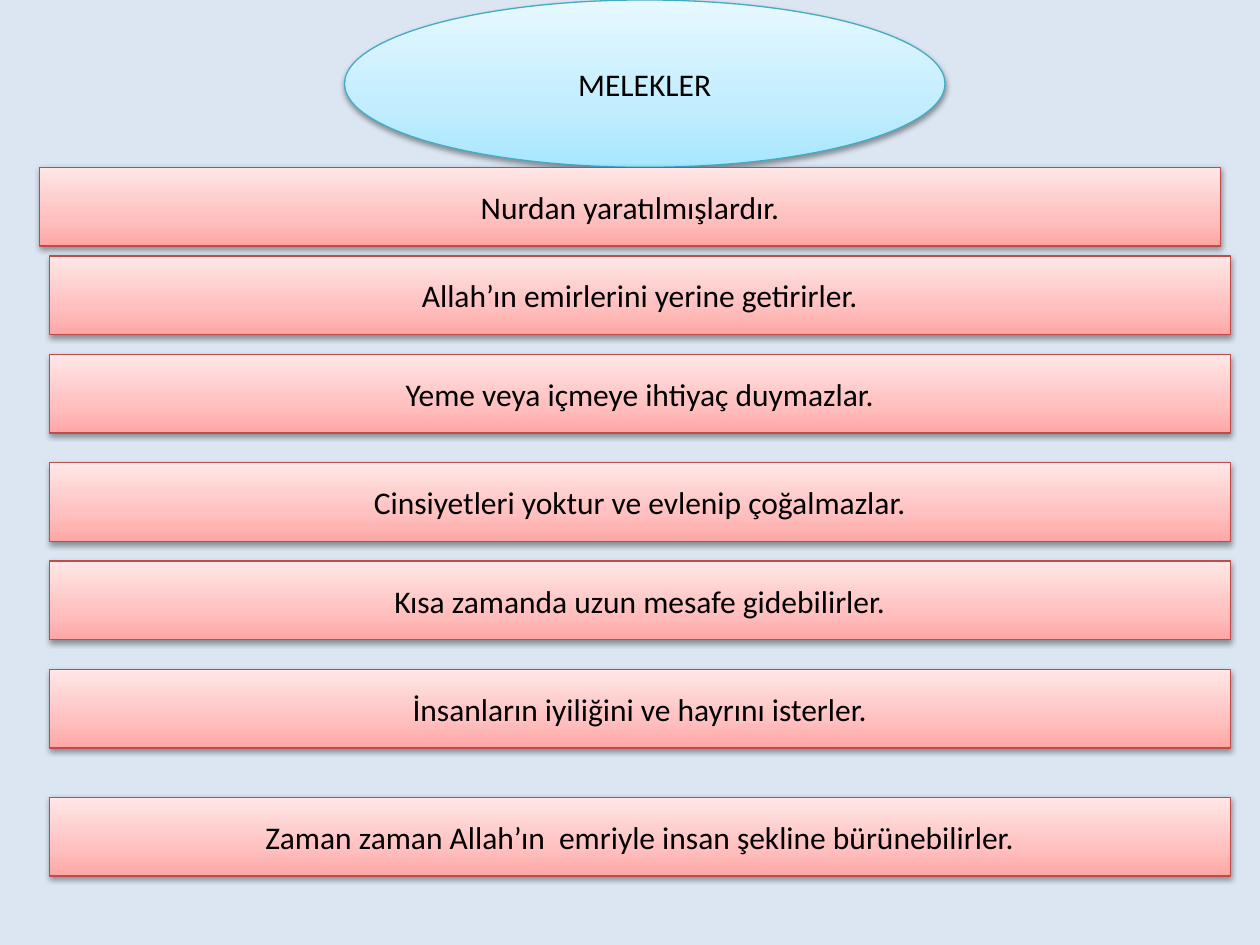
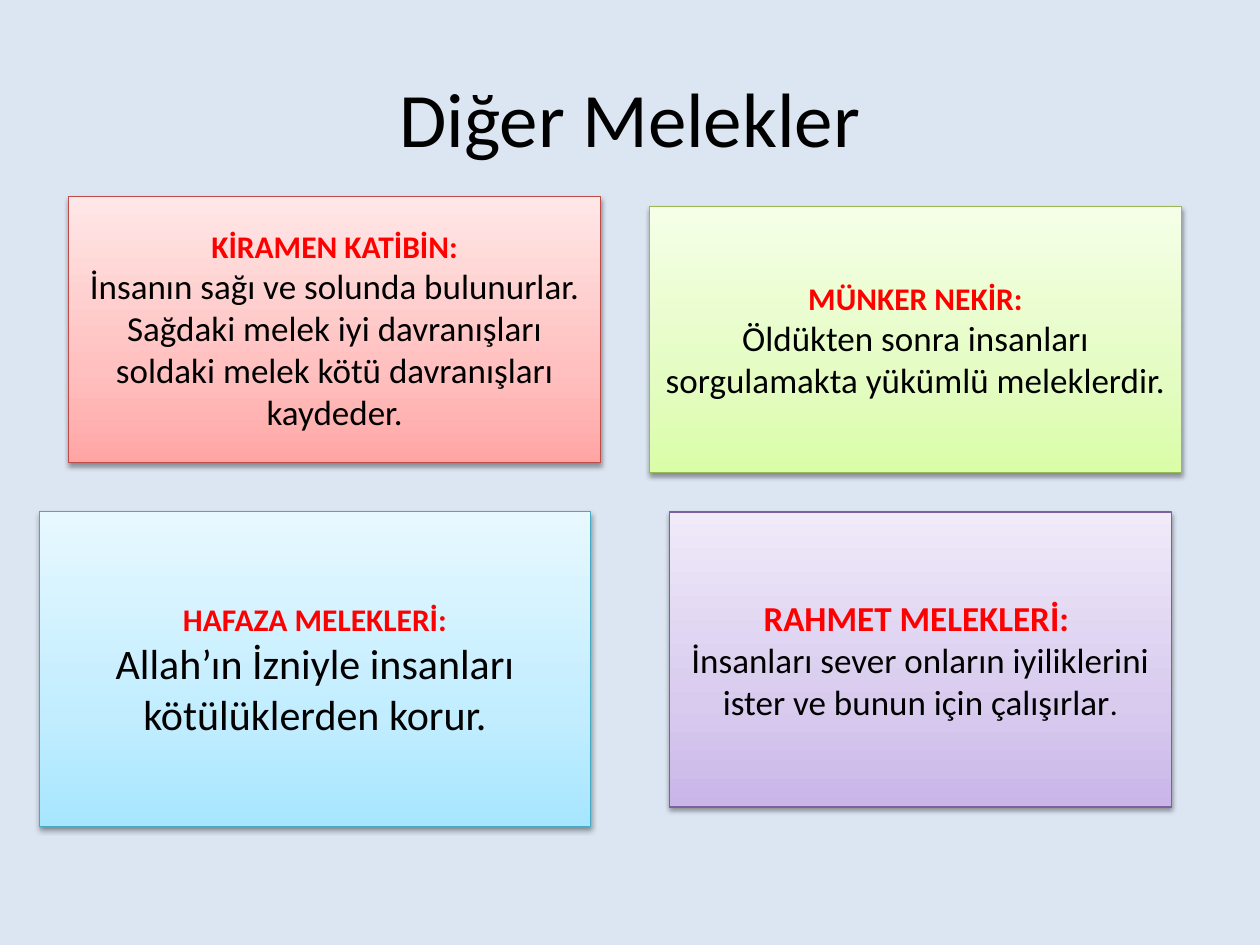
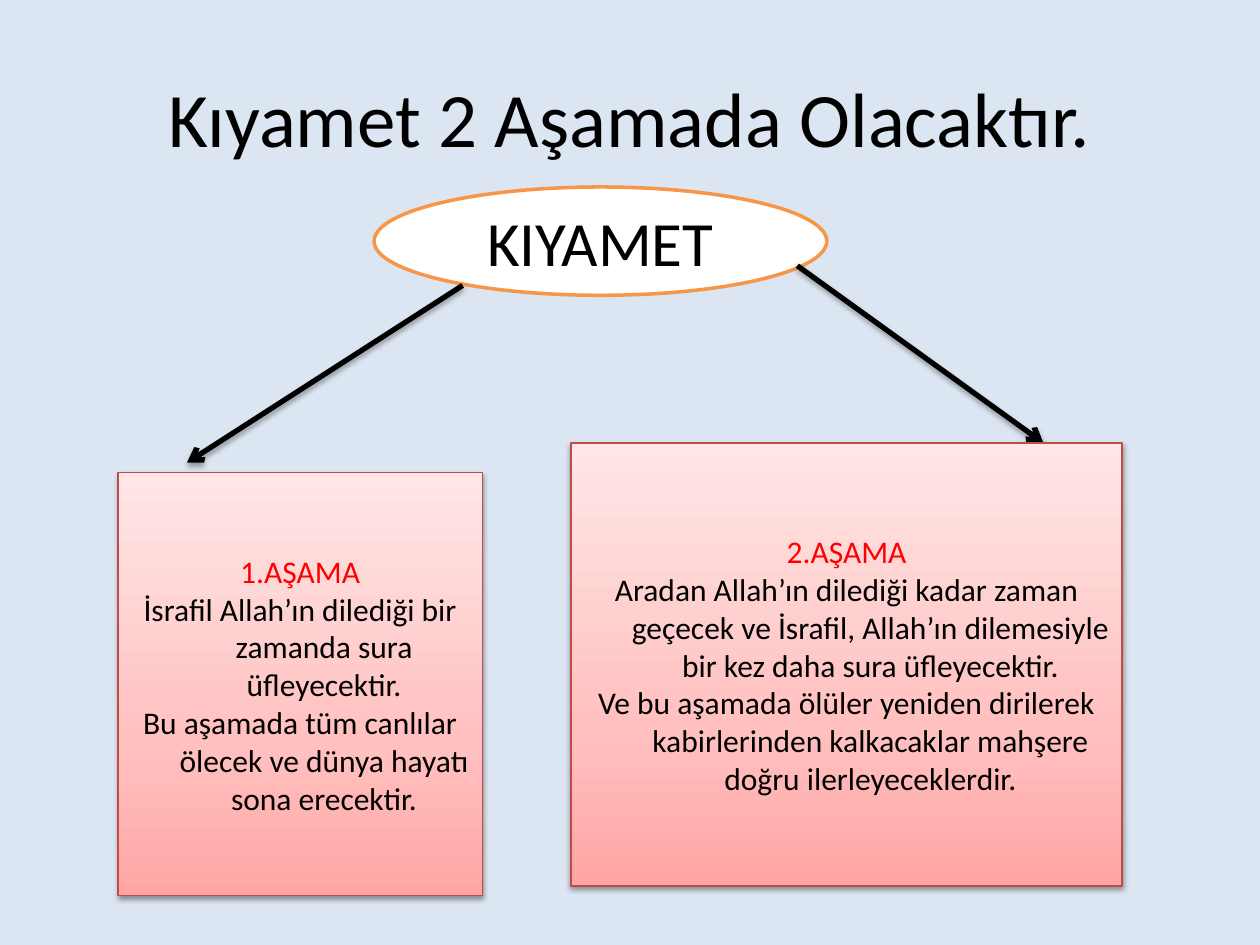
from copy import deepcopy

from lxml.etree import SubElement
from pptx import Presentation
from pptx.dml.color import RGBColor
from pptx.enum.shapes import MSO_CONNECTOR as Connector, MSO_SHAPE as Shape
from pptx.enum.text import MSO_ANCHOR as Anchor, PP_ALIGN as Align
from pptx.oxml.ns import qn
from pptx.util import Inches, Pt

BACKGROUND = RGBColor(0xDC, 0xE6, 0xF2)
BLACK = RGBColor(0, 0, 0)
WHITE = RGBColor(0xFF, 0xFF, 0xFF)
HEADING = RGBColor(0xFF, 0, 0)
ORANGE = RGBColor(0xF7, 0x96, 0x46)
PINK = [RGBColor(0xFF, 0xA6, 0xA5), RGBColor(0xFF, 0xC0, 0xBF),
        RGBColor(0xFF, 0xE7, 0xE7), RGBColor(0xBF, 0x4C, 0x48)]
SKY = [RGBColor(0xA7, 0xE6, 0xFF), RGBColor(0xC1, 0xED, 0xFF),
       RGBColor(0xE7, 0xF8, 0xFF), RGBColor(0x46, 0xAA, 0xC5)]
LIME = [RGBColor(0xDA, 0xFD, 0xA7), RGBColor(0xE4, 0xFC, 0xC2),
        RGBColor(0xF5, 0xFF, 0xE7), RGBColor(0x98, 0xB9, 0x55)]
LILAC = [RGBColor(0xC9, 0xB5, 0xE8), RGBColor(0xD8, 0xCB, 0xEE),
         RGBColor(0xF0, 0xEA, 0xF9), RGBColor(0x7D, 0x60, 0xA0)]
FONT = "Calibri"
GRADIENT_POSITIONS = (0, 0.35, 1)

deck = Presentation()
deck.slide_width, deck.slide_height = Inches(10), Inches(7.5)
CELL = deck.slide_width / 128
shadowed = []


def write_text(box, paragraphs, hanging=0):
    frame = box.text_frame
    frame.word_wrap = True
    frame.vertical_anchor = Anchor.MIDDLE
    for index, spans in enumerate(paragraphs):
        para = frame.add_paragraph() if index else frame.paragraphs[0]
        para.alignment = Align.CENTER
        if hanging:
            properties = para._p.get_or_add_pPr()
            properties.set("marL", str(hanging))
            properties.set("indent", str(-hanging))
        for text, size, color, bold in spans:
            span = para.add_run()
            span.text = text
            span.font.name = FONT
            span.font.size = Pt(size)
            span.font.color.rgb = color
            span.font.bold = bold


def add_card(page, kind, cells, palette, paragraphs, hanging=0):
    card = page.shapes.add_shape(kind, *(int(cell * CELL) for cell in cells))
    card.fill.gradient()
    card.fill.gradient_angle = 90
    stop_list = card._element.spPr.find(".//" + qn("a:gsLst"))
    stop_list.append(deepcopy(stop_list[-1]))
    for stop, position, color in zip(card.fill.gradient_stops, GRADIENT_POSITIONS, palette):
        stop.position = position
        stop.color.rgb = color
    card.line.color.rgb = palette[-1]
    card.line.width = Pt(0.75)
    write_text(card, paragraphs, hanging)
    shadowed.append((card, 38, 1.6))


pages = []
for title in (None, "Diğer Melekler", "Kıyamet 2 Aşamada Olacaktır."):
    page = deck.slides.add_slide(deck.slide_layouts[6])
    page.background.fill.solid()
    page.background.fill.fore_color.rgb = BACKGROUND
    if title:
        title_box = page.shapes.add_textbox(
            int(deck.slide_width * 0.05), int(deck.slide_height * 0.04),
            int(deck.slide_width * 0.9), int(deck.slide_height / 6))
        write_text(title_box, [[(title, 44, BLACK, False)]])
    pages.append(page)
angels_page, other_angels_page, doomsday_page = pages

add_card(angels_page, Shape.OVAL, (35, 0, 61, 17), SKY, [[("MELEKLER", 18, BLACK, False)]])
traits = [
    (4, 17, "Nurdan yaratılmışlardır."),
    (5, 26, "Allah’ın emirlerini yerine getirirler."),
    (5, 36, "Yeme veya içmeye ihtiyaç duymazlar."),
    (5, 47, "Cinsiyetleri yoktur ve evlenip çoğalmazlar."),
    (5, 57, "Kısa zamanda uzun mesafe gidebilirler."),
    (5, 68, "İnsanların iyiliğini ve hayrını isterler."),
    (5, 81, "Zaman zaman Allah’ın  emriyle insan şekline bürünebilirler."),
]
for column, row, trait in traits:
    add_card(angels_page, Shape.RECTANGLE, (column, row, 120, 8), PINK,
             [[(trait, 18, BLACK, False)]])

angels = [
    ((7, 20, 54, 27), PINK, ("KİRAMEN KATİBİN:", 18),
     [("İnsanın sağı ve solunda bulunurlar. Sağdaki melek iyi davranışları "
       "soldaki melek kötü davranışları kaydeder.", 20)]),
    ((66, 21, 54, 27), LIME, ("MÜNKER NEKİR:", 18),
     [("Öldükten sonra insanları sorgulamakta yükümlü meleklerdir.", 20)]),
    ((4, 52, 56, 32), SKY, ("HAFAZA MELEKLERİ:", 18),
     [("Allah’ın İzniyle insanları kötülüklerden korur.", 24)]),
    ((68, 52, 51, 30), LILAC, ("RAHMET MELEKLERİ: ", 20),
     [("İnsanları sever onların iyiliklerini ister ve bunun için çalışırlar", 20), (".", 18)]),
]
for cells, palette, name, duties in angels:
    add_card(other_angels_page, Shape.RECTANGLE, cells, palette,
             [[(*name, HEADING, True)], [(*duty, BLACK, False) for duty in duties]])

doomsday = doomsday_page.shapes.add_shape(
    Shape.OVAL, *(int(cell * CELL) for cell in (38, 19, 46, 11)))
doomsday.shadow.inherit = False
doomsday.fill.solid()
doomsday.fill.fore_color.rgb = WHITE
doomsday.line.color.rgb = ORANGE
doomsday.line.width = Pt(2)
write_text(doomsday, [[("KIYAMET", 36, BLACK, False)]])

for ends in ((47, 29, 19, 47), (81, 27, 106, 45)):
    arrow = doomsday_page.shapes.add_connector(
        Connector.STRAIGHT, *(int(cell * CELL) for cell in ends))
    arrow.line.color.rgb = BLACK
    arrow.line.width = Pt(3)
    SubElement(arrow._element.spPr.find(qn("a:ln")), qn("a:tailEnd"), type="arrow")
    shadowed.append((arrow, 35, 1.8))

stages = [
    ((12, 48, 37, 43), "1.AŞAMA",
     ["İsrafil Allah’ın dilediği bir zamanda sura üfleyecektir.",
      "Bu aşamada tüm canlılar ölecek ve dünya hayatı sona erecektir."]),
    ((58, 45, 56, 45), "2.AŞAMA",
     ["Aradan Allah’ın dilediği kadar zaman geçecek ve İsrafil, Allah’ın dilemesiyle "
      "bir kez daha sura üfleyecektir.",
      "Ve bu aşamada ölüler yeniden dirilerek kabirlerinden kalkacaklar mahşere "
      "doğru ilerleyeceklerdir."]),
]
for cells, stage, events in stages:
    add_card(doomsday_page, Shape.RECTANGLE, cells, PINK,
             [[(stage, 18, HEADING, False)]] + [[(event, 18, BLACK, False)] for event in events],
             Inches(0.38))

for caster, opacity, distance in shadowed:
    effects = SubElement(caster._element.spPr, qn("a:effectLst"))
    shadow = SubElement(effects, qn("a:outerShdw"), blurRad=str(Pt(3.1)),
                        dist=str(Pt(distance)), dir="5400000", rotWithShape="0")
    shade = SubElement(shadow, qn("a:srgbClr"), val=str(BLACK))
    SubElement(shade, qn("a:alpha"), val=str(opacity * 1000))

deck.save("out.pptx")
